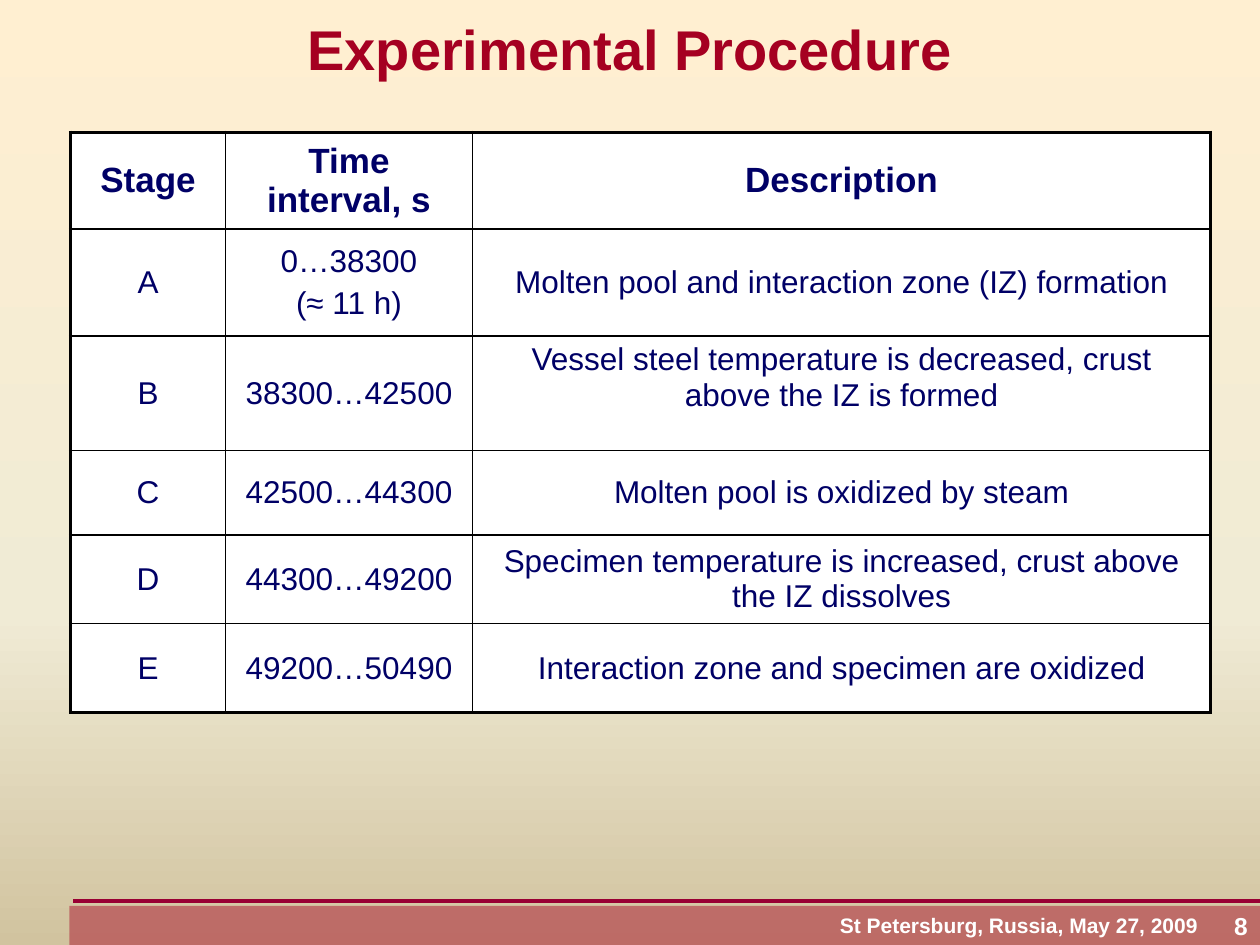
from copy import deepcopy

from lxml import etree
from pptx import Presentation
from pptx.dml.color import RGBColor
from pptx.enum.shapes import MSO_CONNECTOR, MSO_SHAPE
from pptx.enum.text import MSO_ANCHOR, PP_ALIGN
from pptx.oxml.ns import qn
from pptx.util import Inches, Pt

CENTER, RIGHT = PP_ALIGN.CENTER, PP_ALIGN.RIGHT
MIDDLE, TOP = MSO_ANCHOR.MIDDLE, MSO_ANCHOR.TOP
RECTANGLE, STRAIGHT = MSO_SHAPE.RECTANGLE, MSO_CONNECTOR.STRAIGHT

WIDTH, HEIGHT = 10, 7.5
COLORS = {
    "title": "A50021", "rule": "990033", "text": "000066",
    "border": "000000", "white": "FFFFFF",
}
BACKGROUND_STOPS = [(0, "FFEFD1"), (0.65, "F0EBD5"), (1, "D1C39F")]

TABLE_LEFT, TABLE_TOP = 0.56, 1.05
COLUMN_WIDTHS = [1.23, 1.96, 5.86]
ROW_HEIGHTS = [0.72, 0.85, 0.91, 0.67, 0.69, 0.71]
STAGES = [
    ("Stage", "Time interval, s", "Description"),
    ("A", "0…38300\n(≈ 11 h)", "Molten pool and interaction zone (IZ) formation"),
    ("B", "38300…42500",
     "Vessel steel temperature is decreased, crust above the IZ is formed"),
    ("C", "42500…44300", "Molten pool is oxidized by steam"),
    ("D", "44300…49200",
     "Specimen temperature is increased, crust above the IZ dissolves"),
    ("E", "49200…50490", "Interaction zone and specimen are oxidized"),
]
TOP_ALIGNED_CELL = (2, 2)
INNER_BORDER, OUTER_BORDER = 1, 2.25


def rgb(name):
    return RGBColor.from_string(COLORS[name])


def write_text(frame, text, size, color, bold=False, align=CENTER, gap=0):
    """Fill a text frame, one paragraph per line, with gap points between them."""
    frame.text = text
    frame.word_wrap = True
    for index, paragraph in enumerate(frame.paragraphs):
        paragraph.alignment = align
        paragraph.space_before = Pt(gap if index else 0)
        font = paragraph.runs[0].font
        font.name, font.size, font.bold = "Arial", Pt(size), bold
        font.color.rgb = rgb(color)


def set_background(slide):
    fill = slide.background.fill
    fill.gradient()
    fill.gradient_angle = 270
    stop_list = next(slide.element.iter(qn("a:gsLst")))
    stop_list.insert(1, deepcopy(stop_list[0]))
    for stop, (position, color) in zip(fill.gradient_stops, BACKGROUND_STOPS):
        stop.position = position
        stop.color.rgb = RGBColor.from_string(color)


def add_title(slide, text):
    title = slide.shapes.title
    title.left, title.top = 0, 0
    title.width, title.height = Inches(WIDTH), Inches(0.76)
    write_text(title.text_frame, text, 32, "title", bold=True)
    title.text_frame.vertical_anchor = MIDDLE


def add_rule(slide, left, top):
    rule = slide.shapes.add_connector(
        STRAIGHT, Inches(left), Inches(top), Inches(WIDTH), Inches(top))
    rule.line.color.rgb = rgb("rule")
    rule.line.width = Pt(2.25)
    etree.SubElement(rule.element.spPr, qn("a:effectLst"))


def add_footer(slide, text, number):
    left, top, number_width = 0.55, 7.19, 0.39
    bar = slide.shapes.add_shape(
        RECTANGLE, Inches(left), Inches(top), Inches(WIDTH - left), Inches(HEIGHT - top))
    bar.shadow.inherit = False
    bar.line.fill.background()
    bar.fill.solid()
    bar.fill.fore_color.rgb = rgb("title")
    color = next(bar.element.spPr.iter(qn("a:srgbClr")))
    etree.SubElement(color, qn("a:alpha"), val="45000")
    write_text(bar.text_frame, text, 12, "white", bold=True, align=RIGHT)
    bar.text_frame.margin_right = Inches(number_width + 0.1)

    box = slide.shapes.add_textbox(
        Inches(WIDTH - number_width - 0.1), bar.top, Inches(number_width + 0.1), bar.height)
    write_text(box.text_frame, number, 14, "white", bold=True, align=RIGHT)
    for frame in (bar.text_frame, box.text_frame):
        frame.vertical_anchor = MIDDLE


def set_borders(cell, row, column):
    """Draw thick lines on the table's outer edges and thin ones inside."""
    sides = [
        ("a:lnL", column == 0),
        ("a:lnR", column == len(COLUMN_WIDTHS) - 1),
        ("a:lnT", row == 0),
        ("a:lnB", row == len(ROW_HEIGHTS) - 1),
    ]
    properties = cell._tc.get_or_add_tcPr()
    for index, (tag, is_outer) in enumerate(sides):
        width = Pt(OUTER_BORDER if is_outer else INNER_BORDER)
        line = etree.Element(qn(tag), w=str(width))
        fill = etree.SubElement(line, qn("a:solidFill"))
        etree.SubElement(fill, qn("a:srgbClr"), val=COLORS["border"])
        properties.insert(index, line)


def add_stage_table(slide):
    table = slide.shapes.add_table(
        len(ROW_HEIGHTS), len(COLUMN_WIDTHS), Inches(TABLE_LEFT), Inches(TABLE_TOP),
        Inches(sum(COLUMN_WIDTHS)), Inches(sum(ROW_HEIGHTS))).table
    table.first_row = table.horz_banding = False
    for column, width in zip(table.columns, COLUMN_WIDTHS):
        column.width = Inches(width)
    for row, height in zip(table.rows, ROW_HEIGHTS):
        row.height = Inches(height)
    for row, texts in enumerate(STAGES):
        is_header = row == 0
        for column, text in enumerate(texts):
            cell = table.cell(row, column)
            write_text(cell.text_frame, text, 20 if is_header else 18, "text",
                       bold=is_header, gap=3.6)
            cell.vertical_anchor = TOP if (row, column) == TOP_ALIGNED_CELL else MIDDLE
            cell.fill.solid()
            cell.fill.fore_color.rgb = rgb("white")
            set_borders(cell, row, column)


def main():
    presentation = Presentation()
    presentation.slide_width, presentation.slide_height = Inches(WIDTH), Inches(HEIGHT)
    slide = presentation.slides.add_slide(presentation.slide_layouts[5])
    set_background(slide)
    add_rule(slide, 0.58, 7.15)
    add_footer(slide, "St Petersburg, Russia, May 27, 2009", "8")
    add_title(slide, "Experimental Procedure")
    add_stage_table(slide)
    presentation.save("out.pptx")


if __name__ == "__main__":
    main()
